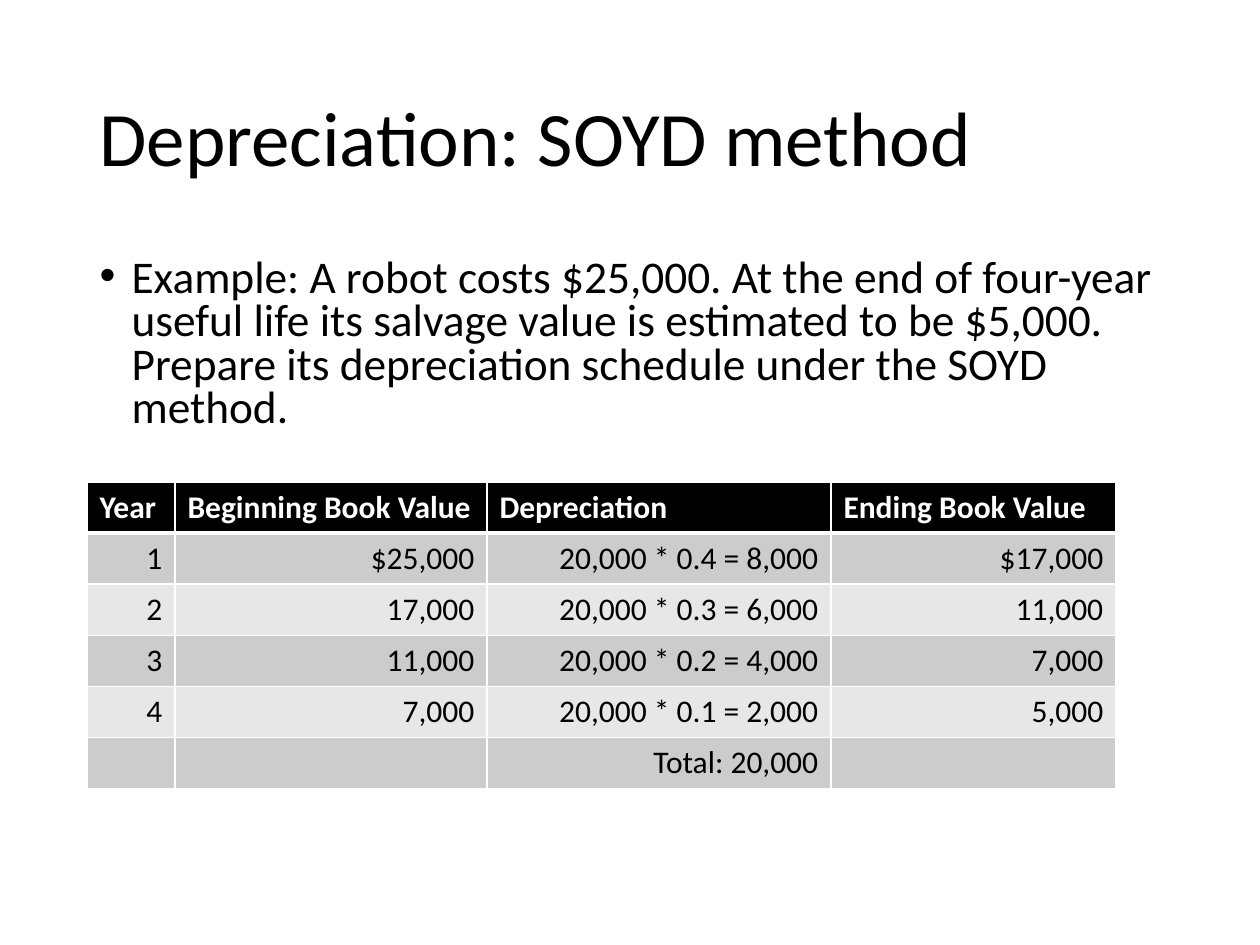
from dataclasses import dataclass

from lxml import etree
from pptx import Presentation
from pptx import util as u
from pptx.dml.color import RGBColor
from pptx.enum import text
from pptx.oxml.ns import qn

PX_PER_INCH = 126


def px(length):
    return u.Inches(length / PX_PER_INCH)


def apply(target, values):
    for name, value in values.items():
        setattr(target, name, value)


@dataclass(frozen=True)
class Theme:
    font: str = "Calibri"
    ink: str = "000000"
    paper: str = "FFFFFF"
    bands: tuple = ("CCCCCC", "E7E7E7")
    title_size: float = 44
    body_size: float = 25.9
    table_size: float = 18
    thin: float = 1
    thick: float = 3


class Builder:
    def __init__(self, theme, page):
        self.theme = theme
        self.page = page

    def add_words(self, para, words, size, color, bold=False):
        span = para.add_run()
        span.text = words
        apply(span.font, {"name": self.theme.font, "size": u.Pt(size), "bold": bold})
        span.font.color.rgb = RGBColor.from_string(color)

    def place(self, box, left, top, width, height, anchor):
        apply(box, {"left": px(left), "top": px(top),
                    "width": px(width), "height": px(height)})
        apply(box.text_frame, {"word_wrap": True, "vertical_anchor": anchor,
                               "auto_size": text.MSO_AUTO_SIZE.NONE})
        return box.text_frame.paragraphs[0]

    def title(self, words, *frame):
        para = self.place(self.page.shapes.title, *frame, text.MSO_ANCHOR.MIDDLE)
        apply(para, {"alignment": text.PP_ALIGN.LEFT, "line_spacing": 0.9})
        self.add_words(para, words, self.theme.title_size, self.theme.ink)

    def bullet(self, words, *frame, indent):
        para = self.place(self.page.placeholders[1], *frame, text.MSO_ANCHOR.TOP)
        apply(para, {"line_spacing": 0.8, "space_before": u.Pt(10)})
        props = para._p.get_or_add_pPr()
        props.set("marL", str(px(indent)))
        props.set("indent", str(-px(indent)))
        etree.SubElement(props, qn("a:buFont")).set("typeface", "Arial")
        etree.SubElement(props, qn("a:buChar")).set("char", "•")
        self.add_words(para, words, self.theme.body_size, self.theme.ink)

    def borders(self, cell, weights):
        props = cell._tc.get_or_add_tcPr()
        for side, weight in weights.items():
            line = etree.SubElement(props, qn(f"a:ln{side}"), w=str(u.Pt(weight)))
            fill = etree.SubElement(line, qn("a:solidFill"))
            etree.SubElement(fill, qn("a:srgbClr"), val=self.theme.paper)

    def cell(self, cell, words, row):
        theme = self.theme
        header = row == 0
        self.borders(cell, {"L": theme.thin, "R": theme.thin,
                            "T": theme.thick if row == 1 else theme.thin,
                            "B": theme.thick if header else theme.thin})
        cell.fill.solid()
        color = theme.ink if header else theme.bands[(row - 1) % 2]
        cell.fill.fore_color.rgb = RGBColor.from_string(color)
        para = cell.text_frame.paragraphs[0]
        para.alignment = text.PP_ALIGN.LEFT if header else text.PP_ALIGN.RIGHT
        if words:
            self.add_words(para, words, theme.table_size,
                           theme.paper if header else theme.ink, header)

    def table(self, rows, left, top, widths, row_height):
        table = self.page.shapes.add_table(
            len(rows), len(widths), px(left), px(top),
            px(sum(widths)), px(row_height * len(rows))).table
        for column, width in zip(table.columns, widths):
            column.width = px(width)
        for r, row in enumerate(rows):
            table.rows[r].height = px(row_height)
            for c, words in enumerate(row):
                self.cell(table.cell(r, c), words, r)


def main():
    deck = Presentation()
    apply(deck, {"slide_width": px(1260), "slide_height": px(945)})
    builder = Builder(Theme(), deck.slides.add_slide(deck.slide_layouts[1]))

    # Title and example
    builder.title("Depreciation: SOYD method", 87, 50, 1086, 183)
    builder.bullet(
        "Example: A robot costs $25,000. At the end of four-year useful life "
        "its salvage value is estimated to be $5,000. Prepare its depreciation "
        "schedule under the SOYD method.", 87, 252, 1086, 193, indent=32)

    # Depreciation schedule
    builder.table([
        ("Year", "Beginning Book Value", "Depreciation", "Ending Book Value"),
        ("1", "$25,000", "20,000 * 0.4 = 8,000", "$17,000"),
        ("2", "17,000", "20,000 * 0.3 = 6,000", "11,000"),
        ("3", "11,000", "20,000 * 0.2 = 4,000", "7,000"),
        ("4", "7,000", "20,000 * 0.1 = 2,000", "5,000"),
        ("", "", "Total: 20,000", ""),
    ], 87, 482, (88, 312, 344, 285), 51)

    deck.save("out.pptx")


if __name__ == "__main__":
    main()
